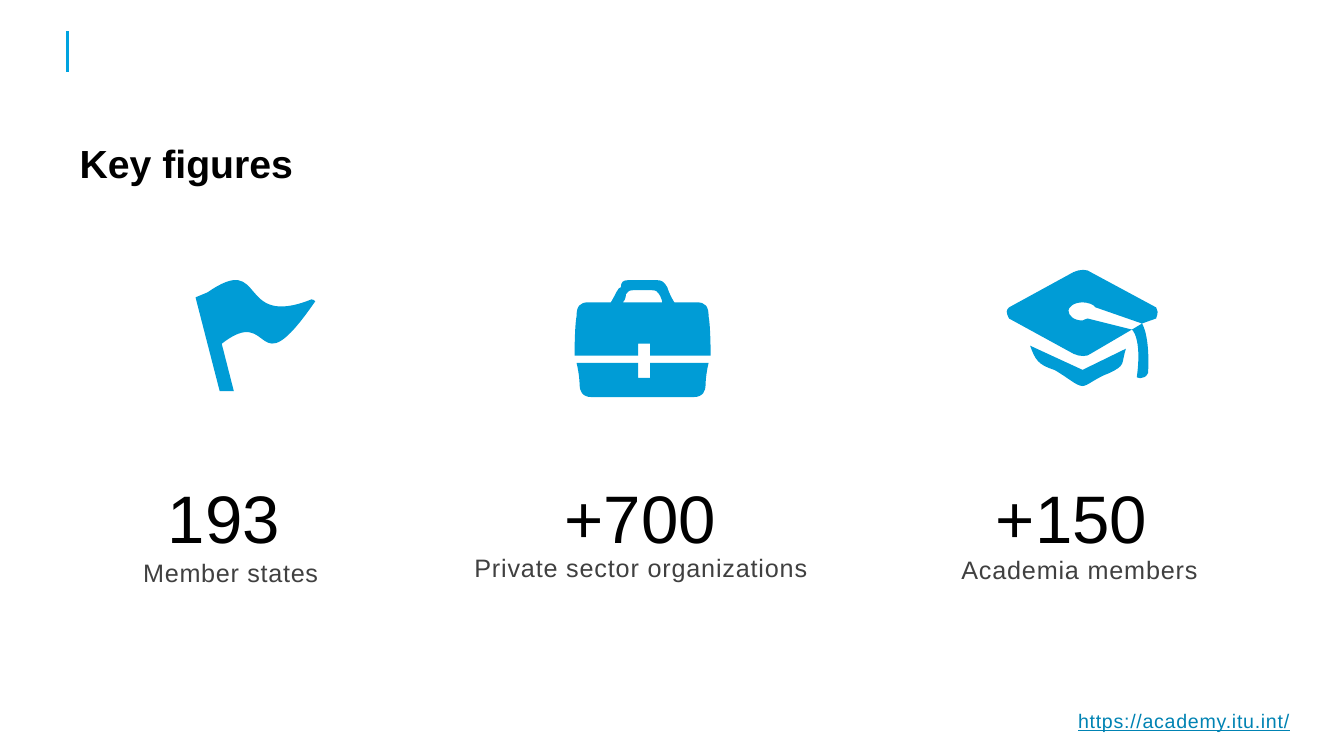
from lxml import etree
from pptx import Presentation
from pptx import util as u
from pptx.dml.color import RGBColor
from pptx.enum import shapes, text
from pptx.oxml import ns

COLORS = {"icon": "009CD6", "bar": "00A3E0", "link": "0083B3", "title": "000000",
          "number": "000000", "label": "404040"}
FONT = "Arial"
WIDTH, HEIGHT = u.Inches(40 / 3), u.Inches(7.5)

TITLE = ("Key figures", (5.18, 18.4, 74.33, 7.07))
LINK = ("https://academy.itu.int/", (76.22, 93.07, 20.48, 4.53))
BAR = (5.03, 4.13, 9.55)
FIGURES = [
    ("193", (4.95, 58.53, 23.4, 17.33),
     "Member states", (4.2, 71.2, 25.95, 10.8), 0.5),
    ("+700", (36.68, 58.53, 21.9, 18.93),
     "Private sector organizations", (32.33, 70.53, 30.75, 11.73), 0.6),
    ("+150", (70.8, 58.53, 17.85, 18.93),
     "Academia members", (67.05, 70.8, 26.55, 11.73), 0.6),
]
FLAG = [
    [(3.09, 2.97), (2.34, 3.27, 2.65, 2.49, 2.06, 2.9), (1.94, 2.95), (2.18, 3.88),
     (2.32, 3.88), (2.2, 3.41), (2.72, 3, 2.51, 3.88, 3.12, 3),
     (3.14, 3, 3.12, 2.97, 3.09, 2.97)],
]
BRIEFCASE = [
    [(6.33, 3.41), (6.45, 3.41), (6.45, 3.53), (7.05, 3.53),
     (7.05, 3.53, 7.05, 3.24, 7.03, 3.14), (7.03, 3.04, 7, 3, 6.91, 3), (6.69, 3),
     (6.64, 2.92, 6.62, 2.85, 6.62, 2.85), (6.59, 2.8, 6.57, 2.78, 6.52, 2.78),
     (6.23, 2.78), (6.18, 2.78, 6.16, 2.8, 6.16, 2.85),
     (6.13, 2.85, 6.11, 2.92, 6.06, 3), (5.84, 3),
     (5.75, 3, 5.72, 3.04, 5.72, 3.14), (5.7, 3.24, 5.7, 3.53, 5.7, 3.53),
     (6.33, 3.53)],
    [(6.21, 2.92), (6.23, 2.9, 6.23, 2.88, 6.28, 2.88), (6.47, 2.88),
     (6.52, 2.88, 6.52, 2.9, 6.54, 2.92), (6.54, 2.92, 6.57, 2.97, 6.57, 3),
     (6.18, 3), (6.21, 2.97, 6.21, 2.92, 6.21, 2.92)],
    [(6.45, 3.75), (6.33, 3.75), (6.33, 3.6), (5.72, 3.6),
     (5.72, 3.6, 5.75, 3.72, 5.75, 3.82), (5.75, 3.87, 5.77, 3.94, 5.87, 3.94),
     (6.88, 3.94), (6.98, 3.94, 7, 3.87, 7, 3.82),
     (7, 3.72, 7.03, 3.6, 7.03, 3.6), (6.45, 3.6)],
]
GRADUATION_CAP = [
    [(10.22, 3.43), (10.27, 3.57, 10.3, 3.62, 10.46, 3.67),
     (10.6, 3.75, 10.68, 3.83, 10.74, 3.83), (10.79, 3.83, 10.87, 3.75, 11.01, 3.7),
     (11.17, 3.62, 11.12, 3.62, 11.17, 3.46), (10.74, 3.67)],
    [(11.47, 3.05), (10.82, 2.7), (10.79, 2.67, 10.71, 2.67, 10.65, 2.7),
     (10.01, 3.05), (9.98, 3.08, 9.98, 3.1, 10.01, 3.16), (10.65, 3.51),
     (10.71, 3.54, 10.79, 3.54, 10.82, 3.51), (11.23, 3.27), (10.79, 3.16),
     (10.76, 3.16, 10.76, 3.18, 10.74, 3.18), (10.65, 3.18, 10.6, 3.13, 10.6, 3.08),
     (10.6, 3.05, 10.65, 3, 10.74, 3), (10.79, 3, 10.85, 3.02, 10.87, 3.05),
     (11.33, 3.21), (11.47, 3.16), (11.49, 3.1, 11.49, 3.08, 11.47, 3.05)],
    [(11.28, 3.73), (11.25, 3.75, 11.36, 3.78, 11.39, 3.7),
     (11.41, 3.32, 11.33, 3.21, 11.33, 3.21), (11.23, 3.27),
     (11.23, 3.27, 11.33, 3.35, 11.28, 3.73)],
]


def place(box):
    x, y, w, h = box
    return [u.Emu(round(share * side / 100))
            for share, side in ((x, WIDTH), (y, HEIGHT), (w, WIDTH), (h, HEIGHT))]


def write(sp, words, role, size, align, line=1.0, spacing=0, bold=False, underline=False):
    tf = sp.text_frame
    tf.text = words
    tf.word_wrap = True
    tf.auto_size = text.MSO_AUTO_SIZE.NONE
    p = tf.paragraphs[0]
    p.alignment = align
    p.line_spacing = line
    r = p.runs[0]
    r.font.name, r.font.size = FONT, u.Pt(size)
    r.font.bold, r.font.underline = bold, underline
    r.font.color.rgb = RGBColor.from_string(COLORS[role])
    if spacing:
        r.font._element.set("spc", str(round(spacing * 100)))


def draw_icon(s, contours):
    steps = [step for contour in contours for step in contour]
    xs = [u.Inches(x) for step in steps for x in step[::2]]
    ys = [u.Inches(y) for step in steps for y in step[1::2]]
    left, top, right, bottom = min(xs), min(ys), max(xs), max(ys)
    builder = s.shapes.build_freeform(left, top)
    builder.add_line_segments([(right, top), (right, bottom), (left, bottom)])
    sp = builder.convert_to_shape()
    outline = next(sp._element.iter(ns.qn("a:path")))
    for child in list(outline):
        outline.remove(child)
    for contour in contours:
        for i, step in enumerate(contour):
            tag = "a:moveTo" if i == 0 else "a:lnTo" if len(step) == 2 else "a:cubicBezTo"
            segment = etree.SubElement(outline, ns.qn(tag))
            for x, y in zip(step[::2], step[1::2]):
                etree.SubElement(segment, ns.qn("a:pt"), x=str(u.Inches(x) - left),
                                 y=str(u.Inches(y) - top))
        etree.SubElement(outline, ns.qn("a:close"))
    sp.shadow.inherit = False
    sp.fill.solid()
    sp.fill.fore_color.rgb = RGBColor.from_string(COLORS["icon"])
    sp.line.fill.background()


def draw_figure(s, number, number_box, label, label_box, spacing):
    group = s.shapes.add_group_shape()
    for words, box, role, size, gap in ((label, label_box, "label", 18, spacing),
                                        (number, number_box, "number", 48, 0)):
        sp = group.shapes.add_textbox(*place(box))
        tf = sp.text_frame
        tf.margin_left = tf.margin_right = u.Inches(0.2)
        tf.margin_top = tf.margin_bottom = u.Inches(0.1)
        write(sp, words, role, size, text.PP_ALIGN.CENTER, 1.3, gap)


def main():
    prs = Presentation()
    prs.slide_width, prs.slide_height = WIDTH, HEIGHT
    s = prs.slides.add_slide(prs.slide_layouts[5])

    words, box = LINK
    write(s.shapes.add_textbox(*place(box)), words, "link", 14,
          text.PP_ALIGN.RIGHT, spacing=0.5, underline=True)

    x, top, bottom = BAR
    left, start, _, length = place((x, top, 0, bottom - top))
    bar = s.shapes.add_connector(shapes.MSO_CONNECTOR.STRAIGHT,
                                 left, start, left, start + length)
    bar.line.color.rgb = RGBColor.from_string(COLORS["bar"])
    bar.line.width = u.Pt(2)
    etree.SubElement(bar._element.spPr, ns.qn("a:effectLst"))

    words, box = TITLE
    title = s.shapes.title
    title.left, title.top, title.width, title.height = place(box)
    write(title, words, "title", 28, text.PP_ALIGN.LEFT, 0.9, bold=True)
    title.text_frame.vertical_anchor = text.MSO_ANCHOR.MIDDLE

    for figure in FIGURES:
        draw_figure(s, *figure)
    for icon in (FLAG, BRIEFCASE, GRADUATION_CAP):
        draw_icon(s, icon)
    prs.save("out.pptx")


if __name__ == "__main__":
    main()
